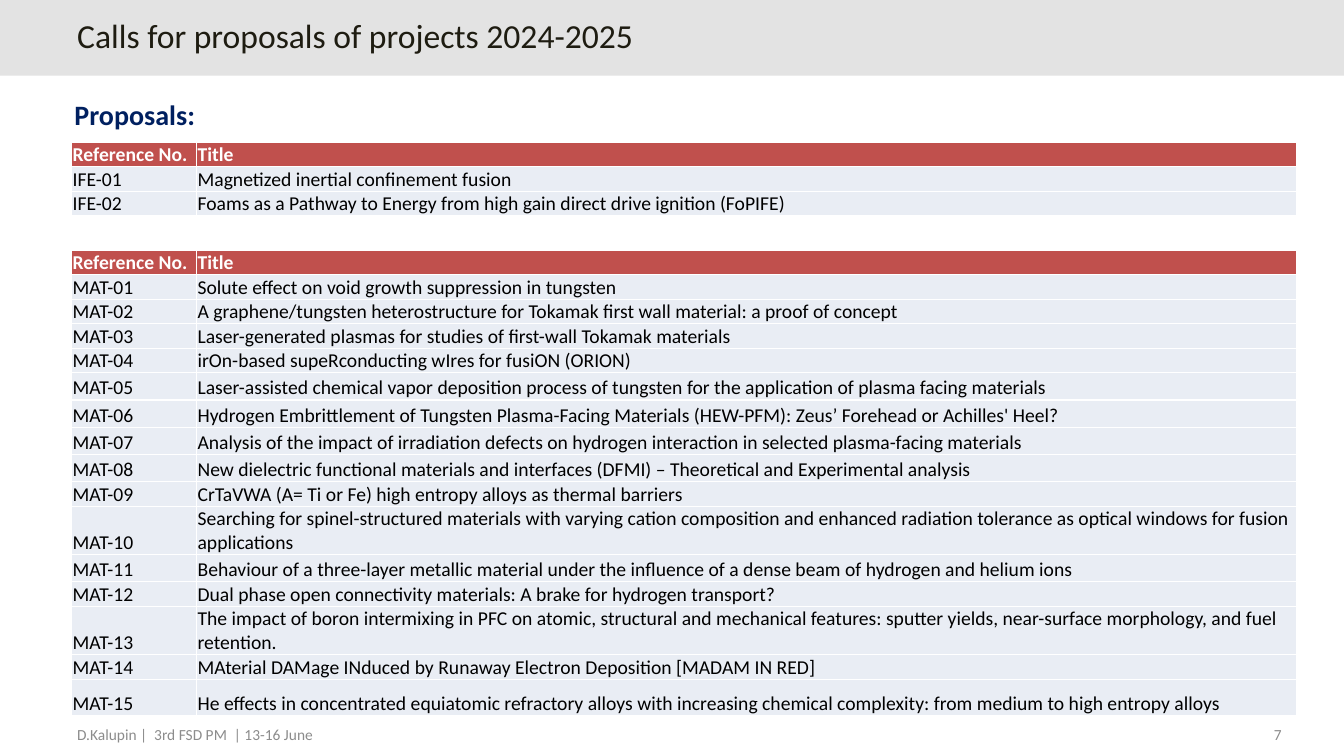
from lxml import etree
from pptx import Presentation
from pptx.dml.color import RGBColor
from pptx.enum.shapes import MSO_SHAPE
from pptx.enum.text import MSO_ANCHOR, PP_ALIGN
from pptx.oxml.ns import qn
from pptx.util import Inches, Pt

RECT = MSO_SHAPE.RECTANGLE
TOP, MIDDLE, BOTTOM = MSO_ANCHOR.TOP, MSO_ANCHOR.MIDDLE, MSO_ANCHOR.BOTTOM
LEFT, RIGHT = PP_ALIGN.LEFT, PP_ALIGN.RIGHT

WIDTH, HEIGHT = Inches(13.33), Inches(7.5)
COL, ROW = WIDTH / 100, HEIGHT / 100

COLORS = {
    "band": "E3E3E3",
    "title": "1E1C11",
    "navy": "002060",
    "gray": "8C8C8C",
    "head": "C0504D",
    "body": "E9EDF4",
    "white": "FFFFFF",
    "black": "000000",
}
FORMATS = {
    "title": {"size": Pt(24), "bold": False},
    "lead": {"size": Pt(20), "bold": True},
    "foot": {"size": Pt(11), "bold": False},
    "head": {"size": Pt(14), "bold": True},
    "body": {"size": Pt(14), "bold": False},
}
CELL = {
    "margin_left": Inches(0.01),
    "margin_right": Inches(0.01),
    "margin_top": Inches(0.01),
    "margin_bottom": 0,
    "vertical_anchor": BOTTOM,
}
ONE, TALL, TWO, LAST = 3.2, 3.6, 6.4, 4.8

ENERGY = [
    (ONE, "Magnetized inertial confinement fusion"),
    (ONE, "Foams as a Pathway to Energy from high gain direct drive ignition (FoPIFE)"),
]
MATTER = [
    (ONE, "Solute effect on void growth suppression in tungsten"),
    (ONE, "A graphene/tungsten heterostructure for Tokamak first wall material: "
          "a proof of concept"),
    (ONE, "Laser-generated plasmas for studies of first-wall Tokamak materials"),
    (ONE, "irOn-based supeRconducting wIres for fusiON (ORION)"),
    (TALL, "Laser-assisted chemical vapor deposition process of tungsten for the "
           "application of plasma facing materials"),
    (TALL, "Hydrogen Embrittlement of Tungsten Plasma-Facing Materials (HEW-PFM): "
           "Zeus’ Forehead or Achilles' Heel?"),
    (TALL, "Analysis of the impact of irradiation defects on hydrogen interaction "
           "in selected plasma-facing materials"),
    (TALL, "New dielectric functional materials and interfaces (DFMI) – "
           "Theoretical and Experimental analysis"),
    (ONE, "CrTaVWA (A= Ti or Fe) high entropy alloys as thermal barriers"),
    (TWO, "Searching for spinel-structured materials with varying cation composition "
          "and enhanced radiation tolerance as optical windows for fusion applications"),
    (TALL, "Behaviour of a three-layer metallic material under the influence of a "
           "dense beam of hydrogen and helium ions"),
    (ONE, "Dual phase open connectivity materials: A brake for hydrogen transport?"),
    (TWO, "The impact of boron intermixing in PFC on atomic, structural and mechanical "
          "features: sputter yields, near-surface morphology, and fuel retention."),
    (ONE, "MAterial DAMage INduced by Runaway Electron Deposition [MADAM IN RED]"),
    (LAST, "He effects in concentrated equiatomic refractory alloys with increasing "
           "chemical complexity: from medium to high entropy alloys"),
]


def place(x, y, w, h):
    """Turn grid columns and rows into slide lengths."""
    return int(x * COL), int(y * ROW), int(w * COL), int(h * ROW)


def tint(fill, color):
    """Make a fill solid in a named colour."""
    fill.solid()
    fill.fore_color.rgb = RGBColor.from_string(COLORS[color])


def write(frame, text, look, color):
    """Write one styled paragraph and return it."""
    para = frame.paragraphs[0]
    run = para.add_run()
    run.text = text
    run.font.name = "Calibri"
    run.font.color.rgb = RGBColor.from_string(COLORS[color])
    for key, value in FORMATS[look].items():
        setattr(run.font, key, value)
    return para


def add_band(slide):
    """Draw the band behind the title."""
    band = slide.shapes.add_shape(RECT, *place(0, 0, 100, 10))
    band.shadow.inherit = False
    tint(band.fill, "band")
    band.line.fill.background()


def add_text(slide, area, text, look, color, align=LEFT, anchor=TOP):
    """Add a wrapped text box and return its paragraph."""
    frame = slide.shapes.add_textbox(*place(*area)).text_frame
    frame.word_wrap = True
    frame.vertical_anchor = anchor
    para = write(frame, text, look, color)
    para.alignment = align
    return para


def add_edges(cell):
    """Give a cell thin white borders."""
    props = cell._tc.get_or_add_tcPr()
    for side in ("lnL", "lnR", "lnT", "lnB"):
        line = etree.SubElement(props, qn("a:" + side), w=str(Pt(1)))
        fill = etree.SubElement(line, qn("a:solidFill"))
        etree.SubElement(fill, qn("a:srgbClr"), val=COLORS["white"])


def fill_cell(cell, text, look, color):
    """Style and fill one table cell."""
    for key, value in CELL.items():
        setattr(cell, key, value)
    add_edges(cell)
    tint(cell.fill, look)
    write(cell.text_frame, text, look, color)


def add_calls(slide, top, code, calls):
    """Add a table of numbered proposals."""
    rows = [(ONE, "Reference No.", "Title")]
    rows += [(tall, f"{code}-{num:02}", name)
             for num, (tall, name) in enumerate(calls, 1)]
    high = sum(row[0] for row in rows)
    area = place(5.33, top, 91.13, high)
    table = slide.shapes.add_table(len(rows), 2, *area).table
    table.horz_banding = False
    for col, wide in zip(table.columns, (9.3, 81.83)):
        col.width = int(wide * COL)
    for spot, (tall, *texts) in enumerate(rows):
        table.rows[spot].height = int(tall * ROW)
        look, color = ("body", "black") if spot else ("head", "white")
        for cell, text in zip(table.rows[spot].cells, texts):
            fill_cell(cell, text, look, color)


def main():
    """Build and save the slide."""
    deck = Presentation()
    deck.slide_width, deck.slide_height = WIDTH, HEIGHT
    slide = deck.slides.add_slide(deck.slide_layouts[6])
    add_band(slide)
    title = add_text(slide, (5, 1.73, 82.5, 6.67),
                     "Calls for proposals of projects 2024-2025",
                     "title", "title", anchor=MIDDLE)
    title.line_spacing = Pt(24)
    add_text(slide, (5, 95.2, 28.5, 4.8),
             "D.Kalupin |  3rd FSD PM  | 13-16 June", "foot", "gray")
    add_text(slide, (90.17, 95.2, 5.93, 2.93), "7", "foot", "gray", RIGHT)
    add_text(slide, (4.8, 12.27, 91.07, 6), "Proposals:", "lead", "navy")
    add_calls(slide, 18.8, "IFE", ENERGY)
    add_calls(slide, 33.07, "MAT", MATTER)
    deck.save("out.pptx")


if __name__ == "__main__":
    main()
